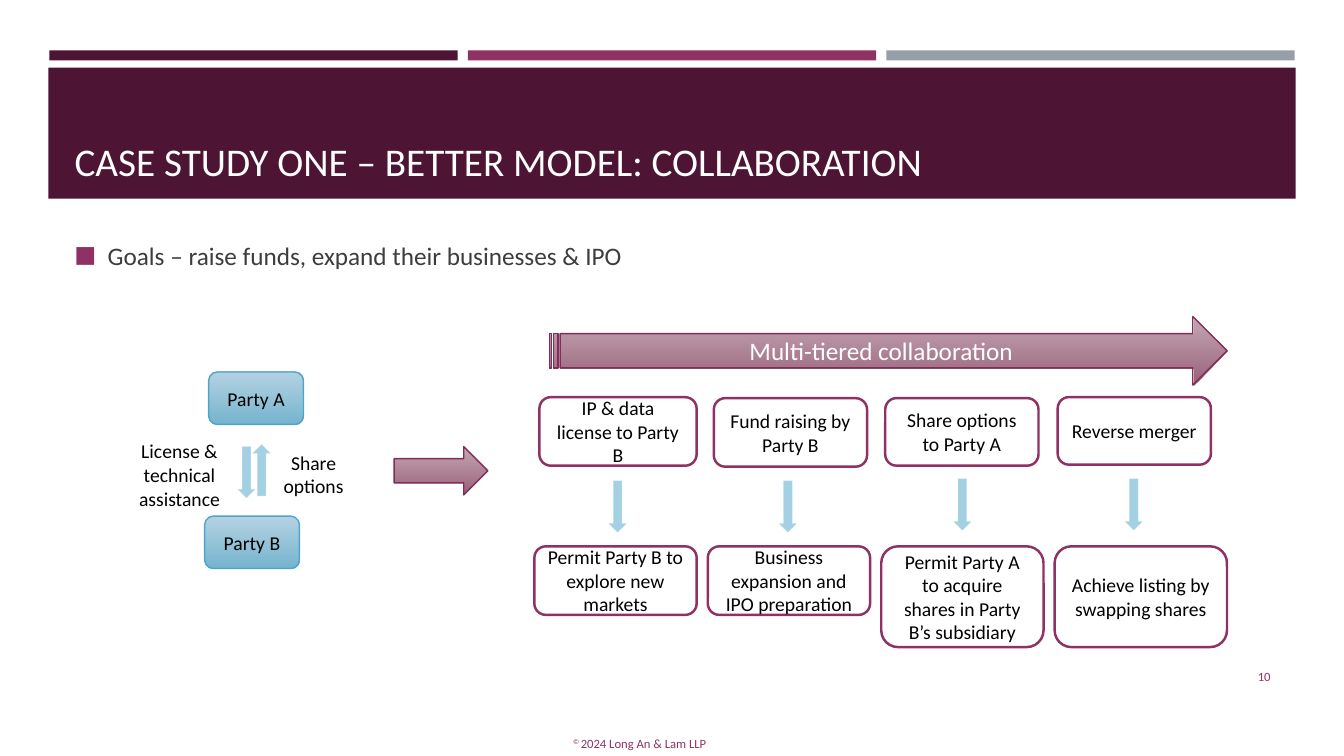
import pptx
import pptx.dml.color
import pptx.enum.shapes
import pptx.enum.text
import pptx.oxml
import pptx.oxml.ns
import pptx.util

Inches = pptx.util.Inches
SHAPE = pptx.enum.shapes.MSO_SHAPE
ALIGN = pptx.enum.text.PP_ALIGN
ANCHOR = pptx.enum.text.MSO_ANCHOR

PLUM = "4D1434"
MAGENTA = "903163"
GREY = "969FA7"
WHITE = "FFFFFF"
BLACK = "000000"
PLUM_GRADIENT = ("BD9FAB", "995F79")
BLUE_GRADIENT = ("ACCEDF", "75B4CF")


def rgb(value):
    """Turn a hex string into a colour."""
    return pptx.dml.color.RGBColor.from_string(value)


def write(frame, text, size=14, color=BLACK, align=ALIGN.CENTER, anchor=ANCHOR.MIDDLE):
    """Put one formatted paragraph into a text frame and return it."""
    frame.word_wrap = True
    frame.auto_size = pptx.enum.text.MSO_AUTO_SIZE.NONE
    frame.vertical_anchor = anchor
    paragraph = frame.paragraphs[0]
    paragraph.alignment = align
    run = paragraph.add_run()
    run.text = text
    run.font.size = pptx.util.Pt(size)
    run.font.name = "Calibri"
    run.font.color.rgb = rgb(color)
    return paragraph


def add_label(slide, box, text, **style):
    """Add a text box and return its paragraph."""
    label = slide.shapes.add_textbox(*map(Inches, box))
    return write(label.text_frame, text, **style)


def add_block(slide, kind, box, fill, line=None, width=1.0, text=None):
    """Add a preset shape with a solid or two-colour fill and optional text."""
    block = slide.shapes.add_shape(kind, *map(Inches, box))
    block.shadow.inherit = False
    if isinstance(fill, tuple):
        shade(block.fill, fill)
    else:
        block.fill.solid()
        block.fill.fore_color.rgb = rgb(fill)
    if line:
        block.line.color.rgb = rgb(line)
        block.line.width = pptx.util.Pt(width)
    else:
        block.line.fill.background()
    if text:
        write(block.text_frame, text)


def shade(fill, colors):
    """Apply a top-to-bottom gradient whose top is slightly transparent."""
    fill.gradient()
    fill.gradient_angle = 270
    for stop, position, color in zip(fill.gradient_stops, (0, 1), colors):
        stop.position = position
        stop.color.rgb = rgb(color)
    top = fill.gradient_stops[0]._gs.find(pptx.oxml.ns.qn("a:srgbClr"))
    top.append(pptx.oxml.parse_xml(
        f'<a:alpha {pptx.oxml.ns.nsdecls("a")} val="90000"/>'))


def add_small_arrow(slide, left, top, kind=SHAPE.DOWN_ARROW):
    """Add a thin light-blue vertical arrow."""
    add_block(slide, kind, (left, top, 0.17, 0.51), "A3D0E2", "C2E0EB", 0.25)


def add_header(slide):
    """Add the three colour bars, the banner and the title."""
    for column, color in enumerate((PLUM, MAGENTA, GREY)):
        add_block(slide, SHAPE.RECTANGLE, (0.49 + 4.15 * column, 0.5, 4.05, 0.1), color)
    add_block(slide, SHAPE.RECTANGLE, (0.48, 0.67, 12.37, 1.3), PLUM)
    title = slide.shapes.title
    title.left, title.top, title.width, title.height = map(Inches, (0.64, 0.77, 12.06, 1.11))
    write(title.text_frame, "CASE STUDY ONE – BETTER MODEL: COLLABORATION",
          size=28, color=WHITE, align=ALIGN.LEFT, anchor=ANCHOR.BOTTOM)
    banner_order = slide.shapes._spTree
    banner_order.append(title._element)


def add_goal(slide):
    """Add the bulleted goal line."""
    goal = add_label(slide, (0.64, 2.29, 12.06, 0.48),
                     "Goals – raise funds, expand their businesses & IPO",
                     size=18, color="3D3D3D", align=ALIGN.LEFT)
    properties = goal._p.get_or_add_pPr()
    properties.set("marL", str(Inches(0.33)))
    properties.set("indent", str(Inches(-0.33)))
    names = pptx.oxml.ns.nsdecls("a")
    for bullet in (f'<a:buClr {names}><a:srgbClr val="{MAGENTA}"/></a:buClr>',
                   f'<a:buSzPct {names} val="92000"/>',
                   f'<a:buFont {names} typeface="Calibri"/>',
                   f'<a:buChar {names} char="■"/>'):
        properties.append(pptx.oxml.parse_xml(bullet))


def add_exchange(slide):
    """Add the two parties and what they give each other."""
    for name, left, top in (("Party A", 2.07, 3.69), ("Party B", 2.03, 5.12)):
        add_block(slide, SHAPE.ROUNDED_RECTANGLE, (left, top, 0.94, 0.52),
                  BLUE_GRADIENT, "4FA5C7", text=name)
    add_small_arrow(slide, 2.36, 4.43)
    add_small_arrow(slide, 2.51, 4.41, SHAPE.UP_ARROW)
    add_label(slide, (1.24, 4.31, 1.08, 0.81), "License & technical assistance",
              anchor=ANCHOR.TOP)
    add_label(slide, (2.57, 4.42, 1.08, 0.57), "Share options", anchor=ANCHOR.TOP)
    add_block(slide, SHAPE.RIGHT_ARROW, (3.91, 4.43, 0.93, 0.48), PLUM_GRADIENT, "822C59")


def add_tiers(slide):
    """Add the collaboration arrow and the four steps with their results."""
    add_block(slide, SHAPE.STRIPED_RIGHT_ARROW, (5.45, 3.14, 6.72, 0.68),
              PLUM_GRADIENT, "822C59")
    add_label(slide, (5.52, 3.27, 6.44, 0.42), "Multi-tiered collaboration",
              size=18, color=WHITE)
    tiers = (
        ("IP & data license to Party B", (5.35, 3.94, 1.56, 0.68), (6.04, 4.77),
         "Permit Party B to explore new markets", (5.3, 5.42, 1.61, 0.68)),
        ("Fund raising by Party B", (7.08, 3.95, 1.52, 0.68), (7.73, 4.77),
         "Business expansion and IPO preparation", (7.02, 5.42, 1.61, 0.68)),
        ("Share options to Party A", (8.78, 3.95, 1.52, 0.67), (9.46, 4.75),
         "Permit Party A to acquire shares in Party B’s subsidiary", (8.74, 5.42, 1.61, 1)),
        ("Reverse merger", (10.49, 3.94, 1.52, 0.67), (11.16, 4.75),
         "Achieve listing by swapping shares", (10.46, 5.42, 1.71, 1)),
    )
    for step, step_box, arrow, result, result_box in tiers:
        for text, box in ((step, step_box), (result, result_box)):
            add_block(slide, SHAPE.ROUNDED_RECTANGLE, box, WHITE, MAGENTA, 1.75, text)
        add_small_arrow(slide, *arrow)


def add_footer(slide):
    """Add the copyright line and the page number."""
    notice = add_label(slide, (3.01, 7.25, 6.67, 0.25), "© ", size=9, color=MAGENTA,
                       anchor=ANCHOR.TOP)
    notice.runs[0].font._element.set("baseline", "30000")
    owner = notice.add_run()
    owner.text = "2024 Long An & Lam LLP"
    owner.font.size = pptx.util.Pt(9)
    owner.font.name = "Calibri"
    owner.font.color.rgb = rgb(MAGENTA)
    add_label(slide, (11.55, 6.51, 1.15, 0.4), "10", size=9, color=MAGENTA,
              align=ALIGN.RIGHT)


def main():
    """Build the slide and save it."""
    deck = pptx.Presentation()
    deck.slide_width, deck.slide_height = Inches(13.33), Inches(7.5)
    slide = deck.slides.add_slide(deck.slide_layouts[5])
    add_header(slide)
    add_goal(slide)
    add_exchange(slide)
    add_tiers(slide)
    add_footer(slide)
    deck.save("out.pptx")


if __name__ == "__main__":
    main()
